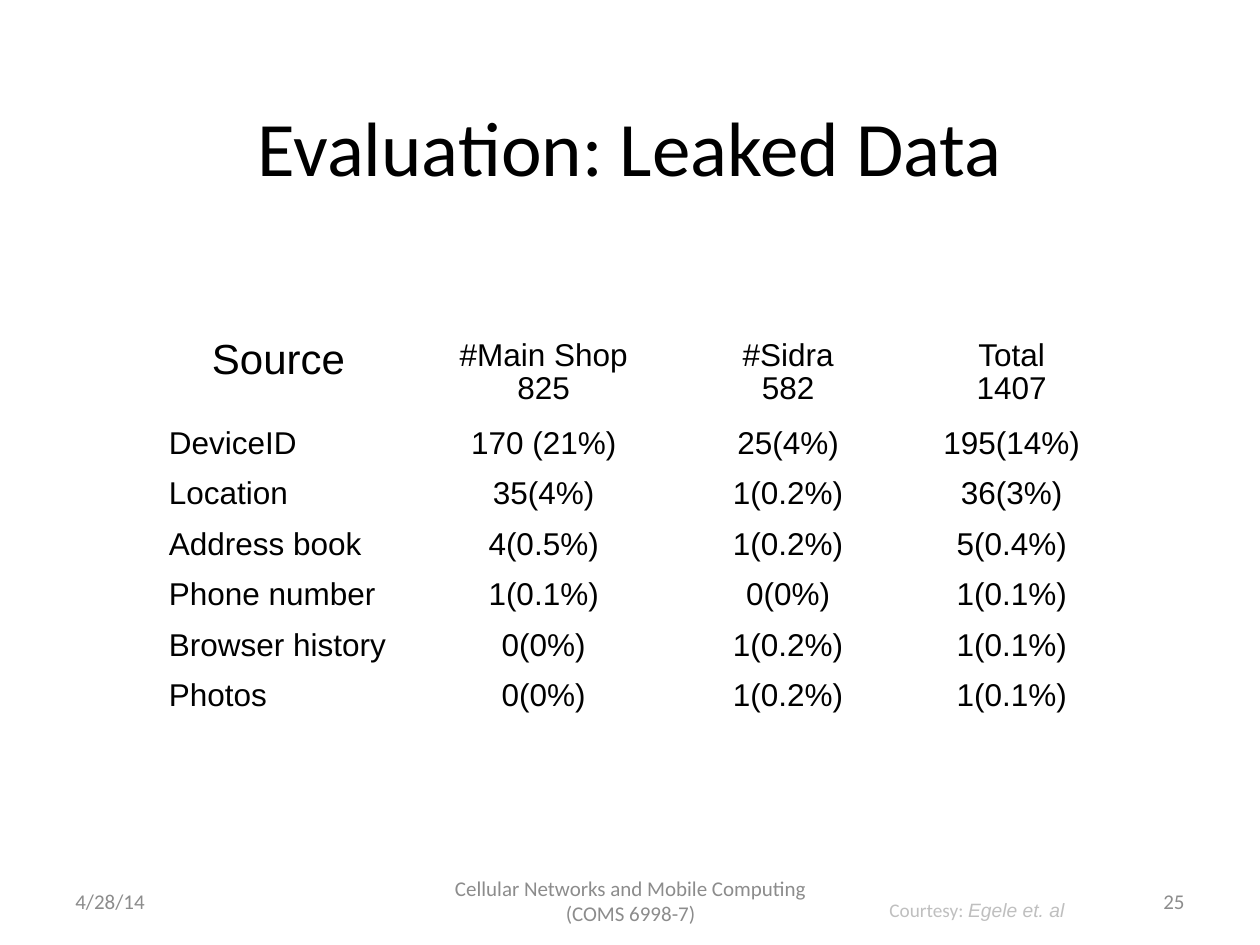
from pptx import Presentation
from pptx.dml.color import RGBColor
from pptx.enum.text import MSO_ANCHOR as Anchor, PP_ALIGN as Align
from pptx.util import Inches, Pt

# Content
TITLE = "Evaluation: Leaked Data"
HEADER = ["Source", "#Main Shop\n825", "#Sidra\n582", "Total\n1407"]
ROWS = [
    ["DeviceID", "170 (21%)", "25(4%)", "195(14%)"],
    ["Location", "35(4%)", "1(0.2%)", "36(3%)"],
    ["Address book", "4(0.5%)", "1(0.2%)", "5(0.4%)"],
    ["Phone number", "1(0.1%)", "0(0%)", "1(0.1%)"],
    ["Browser history", "0(0%)", "1(0.2%)", "1(0.1%)"],
    ["Photos", "0(0%)", "1(0.2%)", "1(0.1%)"],
]
COL_WIDTHS = [1.94, 2.27, 1.61, 1.94]
HEADER_HEIGHT, ROW_HEIGHT = 0.7, 0.4
FOOTERS = [  # text, left, width, alignment
    ("4/28/14", 0.5, 2.33, Align.LEFT),
    ("Cellular Networks and Mobile Computing (COMS 6998-7)", 3.42, 3.17, Align.CENTER),
    ("25", 7.17, 2.33, Align.RIGHT),
]
COURTESY = [("Courtesy: ", "Calibri", False), ("Egele et. al", "Arial", True)]
BLACK, GRAY, LIGHT_GRAY = "000000", "8C8C8C", "BFBFBF"
NO_GRID_STYLE = "{2D5ABB26-0587-4C30-8999-92F81FD0307C}"


def set_font(font, name, size, color):
    font.name, font.size = name, Pt(size)
    font.color.rgb = RGBColor.from_string(color)


def set_margins(frame, left, top, right, bottom):
    frame.margin_left, frame.margin_top = Inches(left), Inches(top)
    frame.margin_right, frame.margin_bottom = Inches(right), Inches(bottom)


def add_text_box(s, left, top, width, height):
    return s.shapes.add_textbox(
        Inches(left), Inches(top), Inches(width), Inches(height)).text_frame


prs = Presentation()
prs.slide_width, prs.slide_height = Inches(10), Inches(7.5)
s = prs.slides.add_slide(prs.slide_layouts[5])

# Title
title = s.shapes.title
title.left, title.top = Inches(0.75), Inches(0.52)
title.width, title.height = Inches(8.5), Inches(1.3)
tf = title.text_frame
tf.text = TITLE
tf.vertical_anchor = Anchor.MIDDLE
set_margins(tf, 0.1, 0.03, 0.1, 0.05)
p = tf.paragraphs[0]
p.alignment = Align.CENTER
set_font(p.font, "Calibri", 44, BLACK)

# Table of leaked data
data = [HEADER] + ROWS
heights = [HEADER_HEIGHT] + [ROW_HEIGHT] * len(ROWS)
frame = s.shapes.add_table(len(data), len(HEADER), Inches(1.24), Inches(2.63),
                           Inches(sum(COL_WIDTHS)), Inches(sum(heights)))
table = frame.table
table.first_row = table.horz_banding = False
table._tbl.tblPr.find("{*}tableStyleId").text = NO_GRID_STYLE
for column, width in zip(table.columns, COL_WIDTHS):
    column.width = Inches(width)
for i, (values, height) in enumerate(zip(data, heights)):
    table.rows[i].height = Inches(height)
    for j, value in enumerate(values):
        cell = table.cell(i, j)
        cell.fill.background()
        set_margins(cell, 0.1, 0.07, 0.1, 0.05)
        p = cell.text_frame.paragraphs[0]
        p.text = value
        p.line_spacing = 0.93
        p.alignment = Align.LEFT if i and j == 0 else Align.CENTER
        set_font(p.font, "Arial", 24 if i == j == 0 else 18, BLACK)

# Date, course and slide number
for text, left, width, alignment in FOOTERS:
    tf = add_text_box(s, left, 6.95, width, 0.4)
    tf.word_wrap = True
    tf.vertical_anchor = Anchor.MIDDLE
    p = tf.paragraphs[0]
    p.text = text
    p.alignment = alignment
    set_font(p.font, "Calibri", 12, GRAY)

# Courtesy note
tf = add_text_box(s, 6.96, 7.08, 1.63, 0.29)
tf.word_wrap = False
for text, font_name, italic in COURTESY:
    r = tf.paragraphs[0].add_run()
    r.text = text
    r.font.italic = italic
    set_font(r.font, font_name, 11, LIGHT_GRAY)

prs.save("out.pptx")
